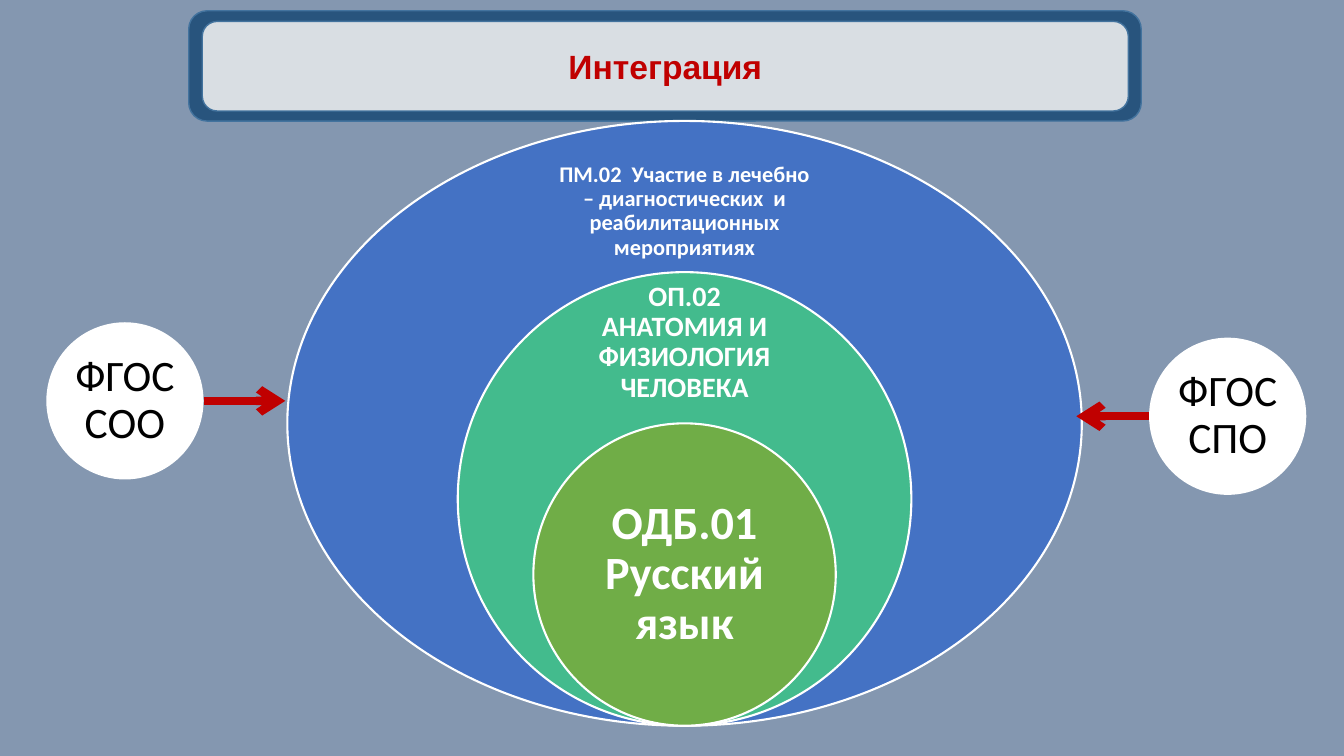
from lxml.etree import SubElement
from pptx import Presentation
from pptx.dml.color import RGBColor
from pptx.enum.shapes import MSO_CONNECTOR, MSO_SHAPE
from pptx.enum.text import MSO_ANCHOR, MSO_AUTO_SIZE, PP_ALIGN
from pptx.oxml.ns import qn
from pptx.util import Pt

HUES = {
    "back": "8497B0", "navy": "1F4E79", "edge": "43739E", "pale": "F2F2F2",
    "red": "C00000", "blue": "4472C4", "teal": "43BB8D", "green": "70AD47",
    "white": "FFFFFF", "black": "000000",
}


def rgb(name):
    return RGBColor.from_string(HUES[name])


class Board:
    def __init__(self, slide, font):
        self.slide = slide
        self.font = font
        slide.background.fill.solid()
        slide.background.fill.fore_color.rgb = rgb("back")

    def shape(self, kind, box, fill, line=None, width=1, alpha=None):
        item = self.slide.shapes.add_shape(kind, *map(Pt, box))
        item.shadow.inherit = False
        item.fill.solid()
        item.fill.fore_color.rgb = rgb(fill)
        if alpha:
            tint = item.element.spPr.find(qn("a:solidFill"))[0]
            SubElement(tint, qn("a:alpha"), val=str(alpha * 1000))
        if line:
            item.line.color.rgb = rgb(line)
            item.line.width = Pt(width)
        else:
            item.line.fill.background()
        return item

    def text(self, item, words, size, hue, bold=True, font=None,
             pad=0, anchor=MSO_ANCHOR.MIDDLE, space=0.9):
        frame = item.text_frame
        frame.word_wrap = True
        frame.auto_size = MSO_AUTO_SIZE.NONE
        frame.vertical_anchor = anchor
        frame.margin_left = frame.margin_right = Pt(pad)
        frame.margin_top = frame.margin_bottom = Pt(pad)
        para = frame.paragraphs[0]
        para.alignment = PP_ALIGN.CENTER
        para.line_spacing = space
        run = para.add_run()
        run.text = words
        run.font.name = font or self.font
        run.font.size = Pt(size)
        run.font.bold = bold
        run.font.color.rgb = rgb(hue)

    def title(self, words, box):
        item = self.slide.shapes.title
        item.left, item.top, item.width, item.height = map(Pt, box)
        self.text(item, words, 24, "red", font="Arial", space=1)
        # Bring the title in front of its panels
        item.element.getparent().append(item.element)

    def label(self, words, box, size, pad, anchor):
        item = self.slide.shapes.add_textbox(*map(Pt, box))
        self.text(item, words, size, "white", pad=pad, anchor=anchor)

    def arrow(self, start, end, y):
        item = self.slide.shapes.add_connector(
            MSO_CONNECTOR.STRAIGHT, Pt(start), Pt(y), Pt(end), Pt(y))
        item.line.color.rgb = rgb("red")
        item.line.width = Pt(6)
        props = item.element.spPr
        SubElement(props.find(qn("a:ln")), qn("a:tailEnd"), type="arrow")
        SubElement(props, qn("a:effectLst"))


def main():
    deck = Presentation()
    deck.slide_width, deck.slide_height = Pt(960), Pt(540)
    board = Board(deck.slides.add_slide(deck.slide_layouts[5]), "Calibri")

    # Title on two rounded panels
    inner = (144.5, 15.3, 661.5, 64)
    board.shape(MSO_SHAPE.ROUNDED_RECTANGLE, (134.8, 7.7, 680.4, 78.8),
                "navy", "edge", alpha=91)
    board.shape(MSO_SHAPE.ROUNDED_RECTANGLE, inner, "pale", "edge", alpha=88)
    board.title("Интеграция", inner)

    # Nested ovals share a centre line and a base
    mid, base = 489, 518.4
    top, centre = MSO_ANCHOR.TOP, MSO_ANCHOR.MIDDLE
    layers = [
        (567.5, 432, "blue", "ПМ.02  Участие в лечебно – диагностических  и "
         "реабилитационных мероприятиях", 16, (198.7, 108, 65), 8.6, top),
        (324, 324, "teal", "ОП.02 АНАТОМИЯ И ФИЗИОЛОГИЯ ЧЕЛОВЕКА",
         20, (151, 214.5, 60.5), 11.5, centre),
        (216, 216, "green", "ОДБ.01 Русский язык",
         33, (152.6, 356.4, 108), 18.7, centre),
    ]
    for wide, high, hue, words, size, (span, y, tall), pad, anchor in layers:
        board.shape(MSO_SHAPE.OVAL, (mid - wide / 2, base - high, wide, high),
                    hue, "white", 1.5)
        board.label(words, (mid - span / 2, y, span, tall), size, pad, anchor)

    # Side circles with arrows towards the ovals
    side = 112.3
    sides = [
        ("ФГОС СОО", 33.1, 230.2, 33.1 + side, 203.8),
        ("ФГОС СПО", 820.8, 241.2, 820.8, 768.8),
    ]
    for words, x, y, start, end in sides:
        disc = board.shape(MSO_SHAPE.OVAL, (x, y, side, side), "white")
        board.text(disc, words, 31, "black", bold=False, pad=2.9)
        board.arrow(start, end, y + side / 2)

    deck.save("out.pptx")


if __name__ == "__main__":
    main()
